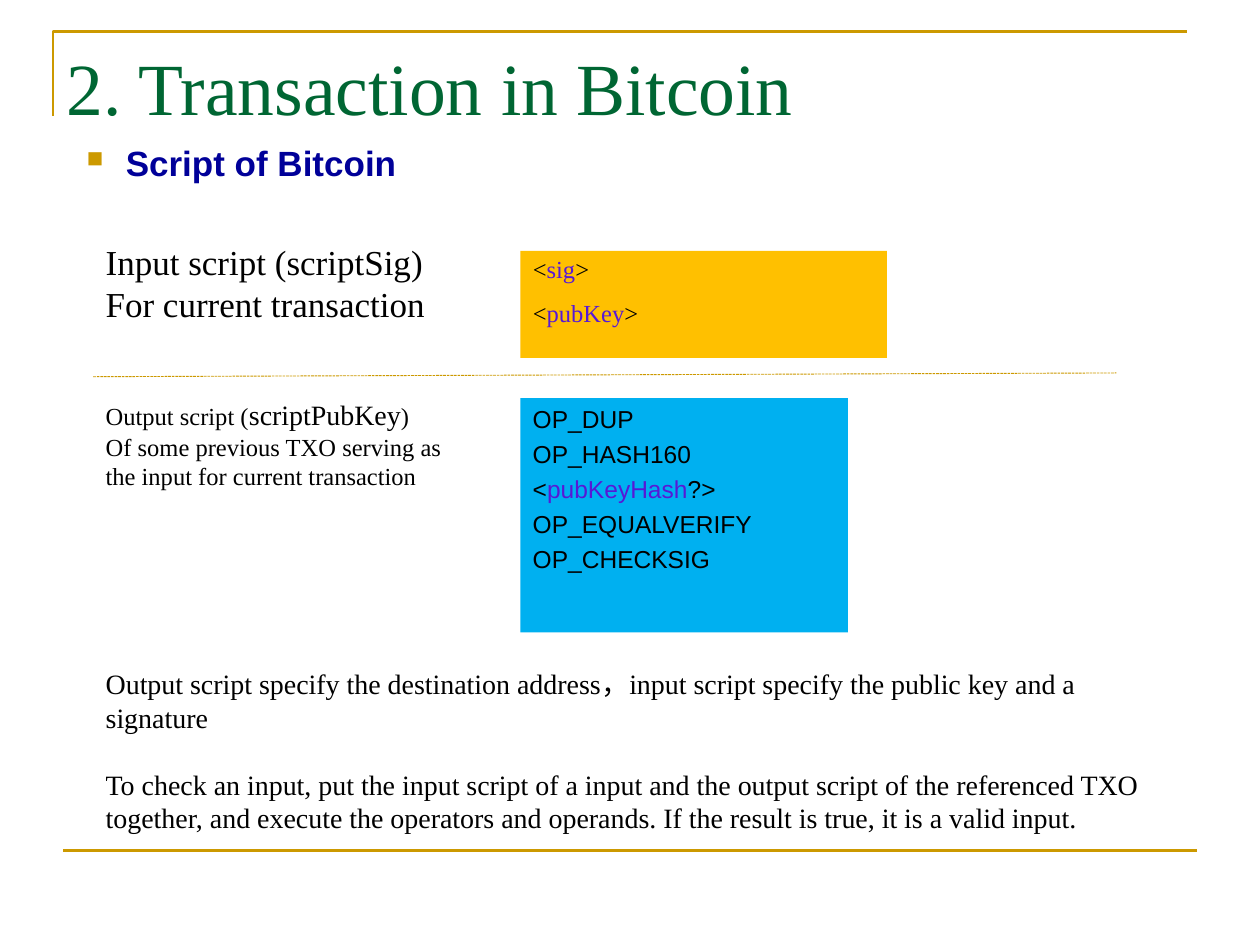
import pptx
import pptx.util
import pptx.dml.color
import pptx.enum.dml
import pptx.enum.shapes
import pptx.enum.text
import pptx.oxml
import pptx.oxml.ns
from dataclasses import dataclass

Inches = pptx.util.Inches
Pt = pptx.util.Pt


@dataclass(frozen=True)
class Theme:
    gold: str = "CC9900"
    green: str = "006633"
    navy: str = "000099"
    black: str = "000000"
    violet: str = "5718D6"
    amber: str = "FFC000"
    blue: str = "00B0F0"
    serif: str = "Times New Roman"
    sans: str = "Arial"
    title: int = 42
    head: int = 20
    body: int = 16
    small: int = 14


class Page:
    def __init__(self, slide, theme):
        self.shapes = slide.shapes
        self.theme = theme

    def color(self, value):
        return pptx.dml.color.RGBColor.from_string(value)

    def style(self, run, font, size, color, bold=False):
        run.font.name = font
        run.font.size = Pt(size)
        run.font.color.rgb = self.color(color)
        run.font.bold = bold

    def typeset(self, frame, lines, font, size, color=None, bold=False, gap=0, space=None):
        frame.word_wrap = True
        frame.vertical_anchor = pptx.enum.text.MSO_ANCHOR.TOP
        for i, line in enumerate(lines):
            para = frame.paragraphs[0] if i == 0 else frame.add_paragraph()
            para.alignment = pptx.enum.text.PP_ALIGN.LEFT
            para.space_before = Pt(gap)
            if space:
                para.line_spacing = space
            parts = [(line, {})] if isinstance(line, str) else line
            for text, extra in parts:
                run = para.add_run()
                run.text = text
                look = {"size": size, "color": color or self.theme.black, "bold": bold}
                self.style(run, font, **{**look, **extra})

    def text(self, box, lines, font, size, **look):
        shape = self.shapes.add_textbox(*map(Inches, box))
        self.typeset(shape.text_frame, lines, font, size, **look)
        return shape.text_frame

    def block(self, box, fill, lines, font, **look):
        kind = pptx.enum.shapes.MSO_SHAPE.RECTANGLE
        shape = self.shapes.add_shape(kind, *map(Inches, box))
        shape.shadow.inherit = False
        shape.fill.solid()
        shape.fill.fore_color.rgb = self.color(fill)
        shape.line.fill.background()
        self.typeset(shape.text_frame, lines, font, self.theme.small, **look)

    def line(self, start, end, width, dash=None):
        kind = pptx.enum.shapes.MSO_CONNECTOR.STRAIGHT
        line = self.shapes.add_connector(kind, *map(Inches, start + end))
        line.line.color.rgb = self.color(self.theme.gold)
        line.line.width = Pt(width)
        if dash:
            line.line.dash_style = dash
        props = line._element.spPr
        props.append(pptx.oxml.parse_xml(f"<a:effectLst {pptx.oxml.ns.nsdecls('a')}/>"))

    def frame(self, points, width):
        spots = [(Inches(x), Inches(y)) for x, y in points]
        outline = self.shapes.build_freeform(*spots[0])
        outline.add_line_segments(spots[1:], close=False)
        shape = outline.convert_to_shape()
        shape.shadow.inherit = False
        shape.fill.background()
        shape.line.color.rgb = self.color(self.theme.gold)
        shape.line.width = Pt(width)

    def bullet(self, para, indent):
        props = para._p.get_or_add_pPr()
        props.set("marL", str(Inches(indent)))
        props.set("indent", str(-Inches(indent)))
        space = pptx.oxml.ns.nsdecls("a")
        for mark in (
            f'<a:buClr {space}><a:srgbClr val="{self.theme.gold}"/></a:buClr>',
            f'<a:buSzPct {space} val="65000"/>',
            f'<a:buChar {space} char="■"/>',
        ):
            props.append(pptx.oxml.parse_xml(mark))


def main():
    deck = pptx.Presentation()
    deck.slide_width, deck.slide_height = Inches(10), Inches(7.5)
    theme = Theme()
    page = Page(deck.slides.add_slide(deck.slide_layouts[6]), theme)
    left, mid = 0.74, 4.13
    key = {"color": theme.violet}

    page.frame([(0.42, 0.92), (0.42, 0.25), (9.42, 0.25)], 1.5)
    page.line((0.5, 6.75), (9.5, 6.75), 1.5)

    topic = page.text((0.59, 1.07, 8.9, 0.5), ["Script of Bitcoin"], theme.sans,
                      theme.head, color=theme.navy, bold=True, gap=4)
    page.bullet(topic.paragraphs[0], 0.31)

    page.block((mid, 3.16, 2.6, 1.86), theme.blue, [
        "OP_DUP",
        "OP_HASH160",
        [("<", {}), ("pubKeyHash", key), ("?>", {})],
        "OP_EQUALVERIFY",
        "OP_CHECKSIG",
    ], theme.sans, gap=3.2)
    page.block((mid, 1.99, 2.91, 0.85), theme.amber, [
        [("<", {}), (name, key), (">", {})] for name in ("sig", "pubKey")
    ], theme.serif, gap=10, space=0.9)

    page.text((left, 1.86, 3.03, 0.77),
              ["Input script (scriptSig)", "For current transaction"],
              theme.serif, theme.head)
    page.text((left, 3.11, 3.03, 0.84), [
        [("Output script (", {}), ("scriptPubKey", {"size": theme.body}), (")", {})],
        "Of some previous TXO serving as the input for current transaction",
    ], theme.serif, theme.small)
    page.line((left, 2.99), (8.86, 2.96), 0.5, pptx.enum.dml.MSO_LINE.SQUARE_DOT)

    notes = page.text((left, 5.24, 8.59, 1.45), [
        "Output script specify the destination address，input script specify "
        "the public key and a signature",
        "To check an input, put the input script of a input and the output script "
        "of the referenced TXO together, and execute the operators and operands. "
        "If the result is true, it is a valid input.",
    ], theme.serif, theme.body)
    notes.paragraphs[1].space_before = Pt(19.2)

    title = page.text((0.43, 0.25, 8.5, 0.83), ["2. Transaction in Bitcoin"],
                      theme.serif, theme.title, color=theme.green)
    title.vertical_anchor = pptx.enum.text.MSO_ANCHOR.BOTTOM

    deck.save("out.pptx")


if __name__ == "__main__":
    main()
